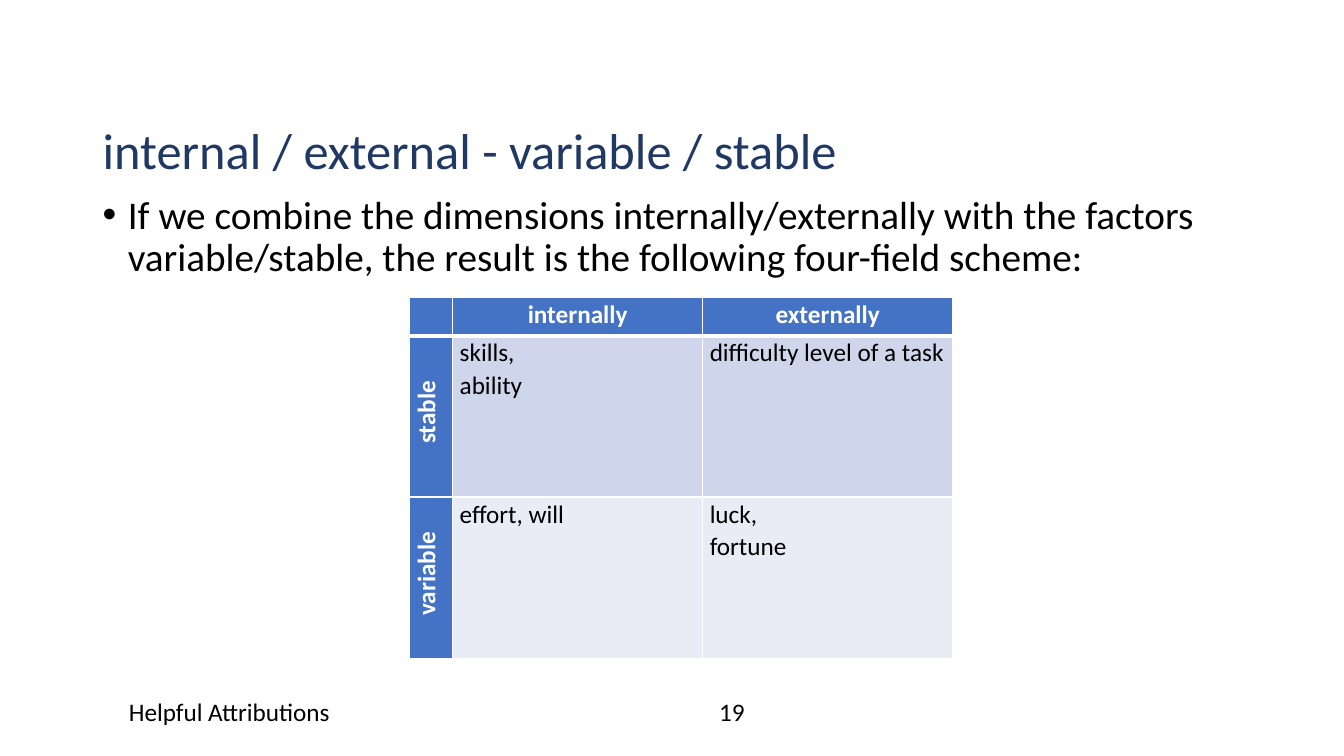
from lxml.etree import SubElement
from pptx import Presentation
from pptx.dml.color import RGBColor
from pptx.enum.text import PP_ALIGN
from pptx.oxml.ns import qn
from pptx.util import Inches, Pt

COLORS = {
    "title": "203864",
    "text": "000000",
    "white": "FFFFFF",
    "header": "4472C4",
    "stable": "CFD5EA",
    "variable": "E9EBF5",
}


def style(paragraph, size, color, bold=False, alignment=PP_ALIGN.LEFT, spacing=1.0):
    paragraph.alignment = alignment
    paragraph.line_spacing = spacing
    paragraph.font.name = "Calibri"
    paragraph.font.size = Pt(size)
    paragraph.font.bold = bold
    paragraph.font.color.rgb = RGBColor.from_string(COLORS[color])


def add_border(cell, side, width):
    properties = cell._tc.get_or_add_tcPr()
    line = SubElement(properties, qn(f"a:ln{side}"), w=str(Pt(width)))
    fill = SubElement(line, qn("a:solidFill"))
    SubElement(fill, qn("a:srgbClr"), val=COLORS["white"])


presentation = Presentation()
presentation.slide_width = Inches(13.33)
presentation.slide_height = Inches(7.5)
slide = presentation.slides.add_slide(presentation.slide_layouts[6])

texts = [
    ("internal / external - variable / stable",
     (0.92, 1.2, 11.5, 0.97), 36, "title", PP_ALIGN.LEFT, 0.9, False),
    ("If we combine the dimensions internally/externally with the factors "
     "variable/stable, the result is the following four-field scheme:",
     (0.92, 1.89, 11.5, 4.51), 28, "text", PP_ALIGN.LEFT, 0.9, True),
    ("Helpful Attributions",
     (1.18, 6.86, 4.5, 0.4), 18, "text", PP_ALIGN.LEFT, 1.0, False),
    ("19",
     (5.76, 6.86, 3, 0.4), 18, "text", PP_ALIGN.CENTER, 1.0, False),
]
for text, box, size, color, alignment, spacing, bulleted in texts:
    shape = slide.shapes.add_textbox(*map(Inches, box))
    shape.text_frame.word_wrap = True
    shape.text_frame.text = text
    paragraph = shape.text_frame.paragraphs[0]
    if bulleted:
        properties = paragraph._p.get_or_add_pPr()
        properties.set("marL", str(Inches(0.25)))
        properties.set("indent", str(Inches(-0.25)))
        SubElement(properties, qn("a:buFont"), typeface="Arial")
        SubElement(properties, qn("a:buChar"), char="•")
    style(paragraph, size, color, alignment=alignment, spacing=spacing)

scheme = [
    ["", "internally", "externally"],
    ["stable", "skills,\nability", "difficulty level of a task"],
    ["variable", "effort, will", "luck,\nfortune"],
]
widths = [0.43, 2.48, 2.48]
heights = [0.38, 1.6, 1.6]
row_fills = ["header", "stable", "variable"]

table = slide.shapes.add_table(
    len(heights), len(widths), Inches(4.06), Inches(2.95),
    Inches(sum(widths)), Inches(sum(heights))).table
for column, width in zip(table.columns, widths):
    column.width = Inches(width)
for row, height in zip(table.rows, heights):
    row.height = Inches(height)

for row_index, row_texts in enumerate(scheme):
    for column_index, text in enumerate(row_texts):
        cell = table.cell(row_index, column_index)
        is_side = row_index > 0 and column_index == 0
        is_header = row_index == 0 or is_side
        cell.margin_left = cell.margin_right = Inches(0.07)
        cell.margin_top = cell.margin_bottom = 0
        cell.text = text
        for paragraph in cell.text_frame.paragraphs:
            if is_side:
                paragraph._p.get_or_add_pPr().set("marL", str(Inches(0.08)))
            style(paragraph, 18, "white" if is_header else "text", is_header,
                  PP_ALIGN.CENTER if is_header else PP_ALIGN.LEFT, 1.07)
        if is_side:
            cell._tc.get_or_add_tcPr().set("vert", "vert270")
        add_border(cell, "L", 1)
        add_border(cell, "R", 1)
        add_border(cell, "T", 3 if row_index == 1 else 1)
        add_border(cell, "B", 3 if row_index == 0 else 1)
        cell.fill.solid()
        fill_name = "header" if is_header else row_fills[row_index]
        cell.fill.fore_color.rgb = RGBColor.from_string(COLORS[fill_name])

presentation.save("out.pptx")
